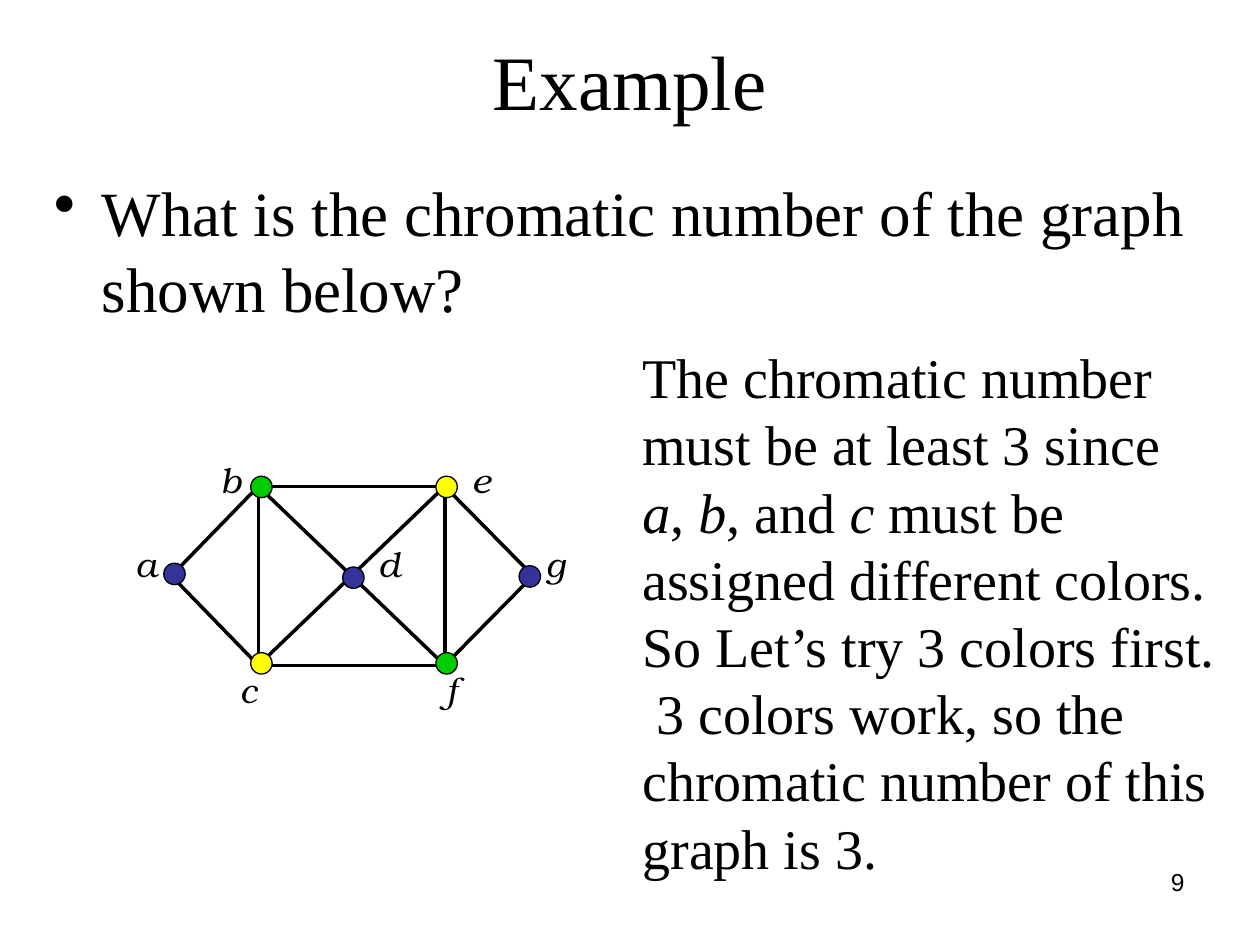
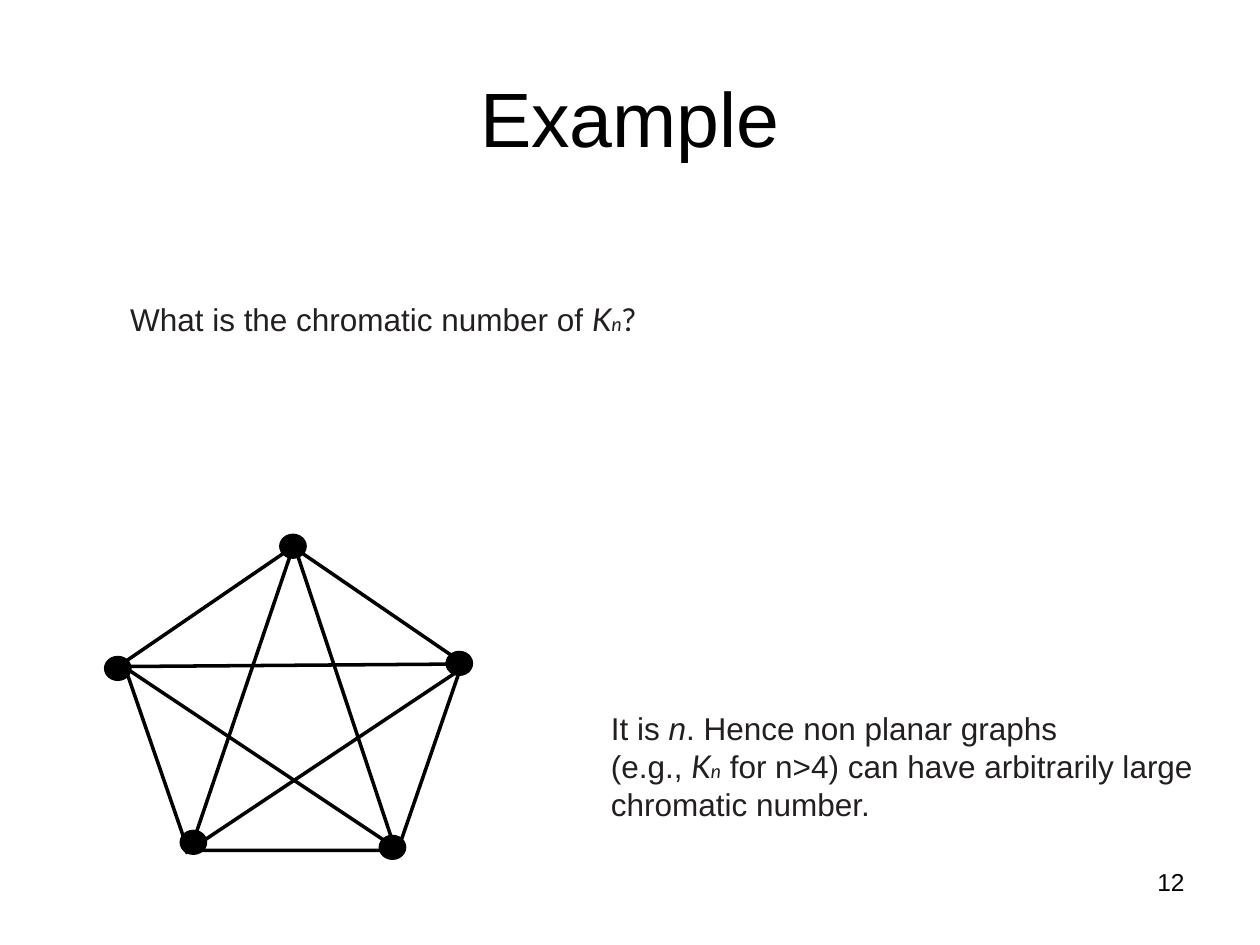
from lxml import etree
from pptx import Presentation
from pptx import util as u
from pptx.dml.color import RGBColor
from pptx.enum import shapes, text
from pptx.oxml.ns import qn

PX = 9144  # 100 px to the inch
BLACK = RGBColor(0x00, 0x00, 0x00)
INK = RGBColor(0x23, 0x1F, 0x20)
BLUE = RGBColor(0x33, 0x33, 0x99)
YELLOW = RGBColor(0xFF, 0xFF, 0x00)
GREEN = RGBColor(0x00, 0xCC, 0x00)
SERIF, SANS, LATO, BONUM = "Times New Roman", "Arial", "Lato", "TeX Gyre Bonum"
LEFT, MID, RIGHT = text.PP_ALIGN.LEFT, text.PP_ALIGN.CENTER, text.PP_ALIGN.RIGHT


def write(page, box, runs, font, size, color=BLACK, align=LEFT):
    """Add a text box; a run is (words, italic, font, size), "\n" breaks the line."""
    frame = page.shapes.add_textbox(*[v * PX for v in box]).text_frame
    frame.word_wrap = True
    para = frame.paragraphs[0]
    para.alignment = align
    for words, *style in runs:
        if words == "\n":
            para.add_line_break()
            continue
        slant, face, pts = style or (False, font, size)
        run = para.add_run()
        run.text = words
        run.font.name = face
        run.font.size = u.Pt(pts)
        run.font.italic = slant
        run.font.color.rgb = color
    return frame


def graph(page, edges, dots, wide, high):
    """Draw edges (x1, y1, x2, y2), then dots (left, top, fill) over them."""
    for edge in edges:
        line = page.shapes.add_connector(
            shapes.MSO_CONNECTOR.STRAIGHT, *[v * PX for v in edge])
        line.line.color.rgb = BLACK
        line.line.width = u.Pt(2)
        etree.SubElement(line._element.spPr, qn("a:effectLst"))
    for x, y, fill in dots:
        dot = page.shapes.add_shape(
            shapes.MSO_SHAPE.OVAL, x * PX, y * PX, wide * PX, high * PX)
        dot.shadow.inherit = False
        dot.fill.solid()
        dot.fill.fore_color.rgb = fill
        dot.line.color.rgb = BLACK
        dot.line.width = u.Pt(0.75)


deck = Presentation()
deck.slide_width, deck.slide_height = 1000 * PX, 750 * PX

# Titles and page numbers
pages = []
for num, font, top, high in (("9", SERIF, 17, 92), ("12", SANS, 30, 125)):
    page = deck.slides.add_slide(deck.slide_layouts[6])
    title = write(page, (50, top, 900, high), [("Example",)], font, 44, align=MID)
    title.vertical_anchor = text.MSO_ANCHOR.MIDDLE
    write(page, (717, 683, 233, 52), [(num,)], SANS, 14, align=RIGHT)
    pages.append(page)
small, full = pages

# Slide 1: bulleted question
ask = write(small, (33, 133, 925, 167),
            [("What is the chromatic number of the graph shown below?",)], SERIF, 36)
para = ask.paragraphs[0]
para.space_before = u.Pt(5)
props = para._p.get_or_add_pPr()
props.set("marL", str(38 * PX))
props.set("indent", str(-38 * PX))
etree.SubElement(props, qn("a:buChar")).set("char", "•")

# Slide 1: answer
write(small, (500, 267, 475, 436), [
    ("The chromatic number must be at least 3 since ",),
    ("a", True, SERIF, 32), (", ",), ("b", True, SERIF, 32), (", and ",),
    ("c", True, SERIF, 32),
    (" must be assigned different colors. So Let’s try 3 colors first.",),
    ("\n",),
    (" 3 colors work, so the chromatic number of this graph is 3.",),
], SERIF, 32)

# Slide 1: seven-node graph
ends = {"a": (136, 457), "b": (205, 386), "c": (205, 528),
        "e": (353, 386), "f": (353, 528), "g": (423, 457)}
pairs = ("be", "bc", "cf", "ef", "bf", "ce", "ba", "ac", "eg", "fg")
graph(small, [ends[s] + ends[t] for s, t in pairs], [
    (130, 447, BLUE), (199, 518, YELLOW), (199, 378, GREEN), (346, 518, GREEN),
    (346, 378, YELLOW), (272, 450, BLUE), (412, 449, BLUE)], 17, 17)

# Slide 1: node labels, by centre and top
for name, x, y in (("b", 183, 359), ("e", 382, 359), ("a", 116, 426), ("d", 309, 426),
                   ("g", 441, 426), ("c", 197, 526), ("f", 358, 526)):
    write(small, (x - 20, y, 40, 43), [(name, True, BONUM, 20)], BONUM, 20, align=MID)

# Slide 2: question and answer
kn = [("K", True, LATO, 18), ("n", True, LATO, 11)]
write(full, (54, 233, 500, 71),
      [("What is the chromatic number of ",), *kn, ("?", False, LATO, 18)],
      SANS, 18, INK, MID)
write(full, (475, 558, 495, 101), [
    ("It is ",), ("n", True, SANS, 18), (". Hence non planar graphs ",), ("\n",),
    ("(e.g., ",), *kn, (" for n>4) can have arbitrarily large ",), ("\n",),
    ("chromatic number.",),
], SANS, 18, INK)

# Slide 2: complete graph on five nodes
rim = full.shapes.add_shape(shapes.MSO_SHAPE.REGULAR_PENTAGON,
                            98 * PX, 434 * PX, 269 * PX, 241 * PX)
rim.shadow.inherit = False
rim.fill.background()
rim.line.color.rgb = BLACK
rim.line.width = u.Pt(2)
graph(full, [
    (98, 529, 314, 673), (100, 529, 371, 527), (232, 436, 151, 675),
    (234, 434, 314, 675), (369, 529, 147, 677),
], [(x, y, BLACK) for x, y in
    ((222, 424), (354, 517), (83, 521), (301, 663), (143, 659))], 21, 19)

deck.save("out.pptx")
